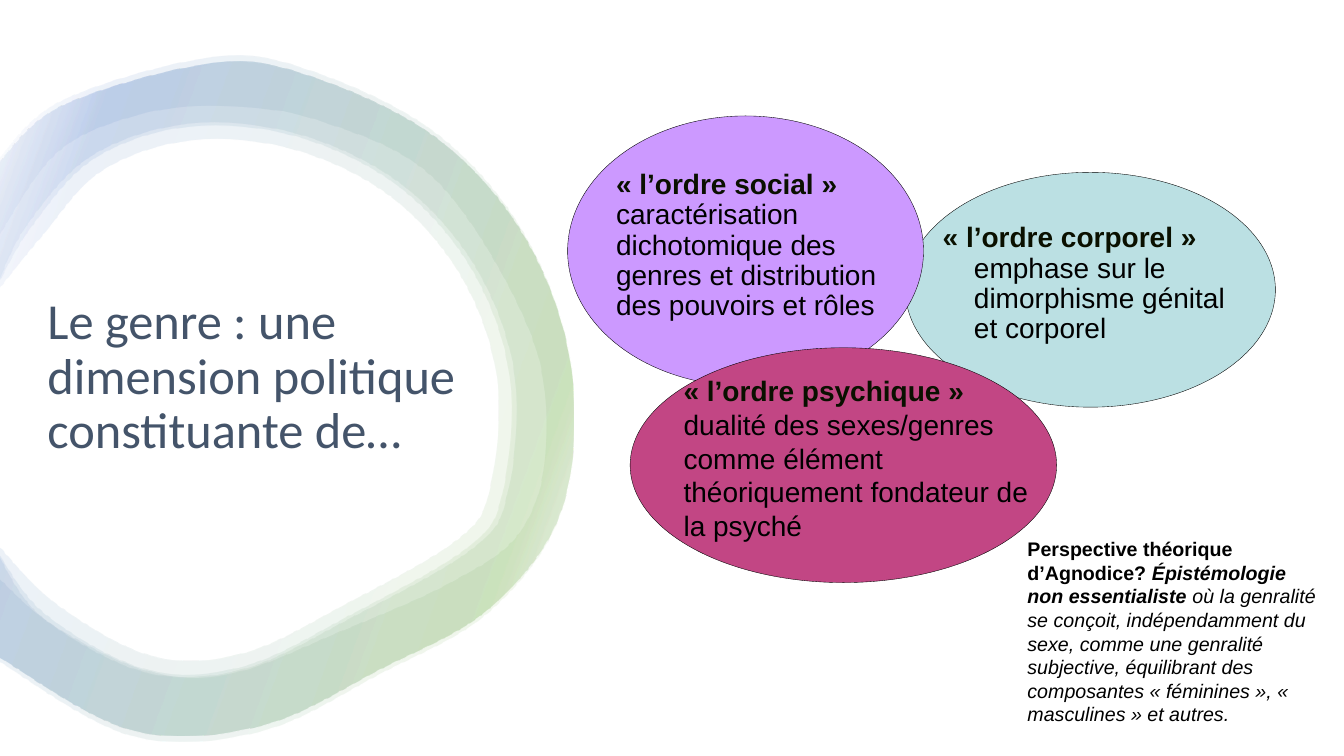
from lxml import etree
from pptx import Presentation
from pptx import util as u
from pptx.dml.color import RGBColor
from pptx.enum import shapes, text
from pptx.oxml import ns

PX = 9144
PAGE_SIZE = (1333, 750)
COLORS = {
    "white": "FFFFFF", "black": "000000", "title": "44546A", "heading": "0A1000",
    "corporel": "BBE0E3", "social": "CC99FF", "psychique": "C24684",
    "green": "70AD47", "blue": "4472C4",
}
RING_STOPS = [(2, "white"), (16, "green"), (85, "blue"), (100, "white")]
RING_ALPHA, RING_ANGLE = 10, 200
CURVE_STEPS = 8
RING_CENTER = (250, 395)

TITLE = ("Le genre : une dimension politique constituante de…", (42, 136, 422, 478))
ELLIPSES = {
    "corporel": (898, 171, 367, 233),
    "social": (563, 115, 353, 268),
    "psychique": (625, 345, 423, 233),
}
ORDERS = {
    "corporel": dict(
        box=(931, 218, 317, 128), heading="« l’ordre corporel » ",
        body="emphase sur le dimorphisme génital et corporel",
        leading=0.9, before=4, hanging=31),
    "social": dict(
        box=(607, 165, 310, 157), heading="« l’ordre social »",
        body=" caractérisation dichotomique des genres et distribution des pouvoirs et rôles",
        leading=0.9, before=4, hanging=0),
    "psychique": dict(
        box=(674, 367, 374, 170), heading="« l’ordre psychique »",
        body=" dualité des sexes/genres comme élément théoriquement fondateur de la psyché",
        leading=1.0, before=11, hanging=0),
}
PERSPECTIVE_BOX = (1015, 529, 299, 185)
PERSPECTIVE = [
    ("Perspective théorique d’Agnodice? ", True, False),
    ("Épistémologie non essentialiste", True, True),
    (" où la genralité se conçoit, indépendamment du sexe, comme une genralité subjective, "
     "équilibrant des composantes « féminines », « masculines » et autres.", False, True),
]

OUTSIDE = [
    (-2, 163), (62, 105), (211, 63), (310, 77), (433, 138), (520, 237), (565, 365),
    (556, 504), (485, 602), (376, 663), (258, 719), (129, 723), (-2, 650),
]
INSIDE = [
    (-2, 547), (46, 609), (145, 663), (241, 660), (345, 610), (463, 542), (497, 488),
    (504, 373), (467, 268), (394, 185), (294, 136), (187, 126), (93, 158), (31, 226),
    (-2, 283),
]
WIDE_INSIDE = [
    (-2, 572), (53, 620), (145, 665), (229, 668), (335, 627), (447, 577), (515, 527),
    (540, 444), (524, 328), (433, 180), (317, 120), (217, 105), (133, 115), (56, 152),
    (-2, 236),
]


def scaled(points, across, down):
    cx, cy = RING_CENTER
    return [(x if x < 0 else cx + (x - cx) * across, cy + (y - cy) * down) for x, y in points]


RINGS = [
    (scaled(OUTSIDE, 1, 1.02), WIDE_INSIDE),
    (OUTSIDE, scaled(INSIDE, 1.02, 1.01)),
    (OUTSIDE, scaled(INSIDE, 0.95, 0.95)),
    (OUTSIDE, INSIDE),
]


def emu(lengths):
    return [u.Emu(round(length * PX)) for length in lengths]


def color(name):
    return RGBColor.from_string(COLORS[name])


def smooth(knots):
    padded = [knots[0], *knots, knots[-1]]
    points = []
    for quad in zip(padded, padded[1:], padded[2:], padded[3:]):
        for i in range(CURVE_STEPS):
            t = i / CURVE_STEPS
            weights = (-t + 2 * t ** 2 - t ** 3, 2 - 5 * t ** 2 + 3 * t ** 3,
                       t + 4 * t ** 2 - 3 * t ** 3, t ** 3 - t ** 2)
            points.append([
                sum(w * knot[axis] for w, knot in zip(weights, quad)) / 2 for axis in (0, 1)])
    return points + [knots[-1]]


def add_ring(page, outside, inside):
    points = [emu(point) for point in smooth(outside) + smooth(inside)]
    builder = page.shapes.build_freeform(*points[0], scale=1.0)
    builder.add_line_segments(points[1:], close=True)
    ring = builder.convert_to_shape()
    ring.shadow.inherit = False
    ring.line.fill.background()
    ring.fill.gradient()
    gradient = ring.element.spPr.find(ns.qn("a:gradFill"))
    gradient.find(ns.qn("a:lin")).set("ang", str(RING_ANGLE * 60000))
    stops = gradient.find(ns.qn("a:gsLst"))
    for stop in list(stops):
        stops.remove(stop)
    for position, name in RING_STOPS:
        stop = etree.SubElement(stops, ns.qn("a:gs"), pos=str(position * 1000))
        tint = etree.SubElement(stop, ns.qn("a:srgbClr"), val=COLORS[name])
        etree.SubElement(tint, ns.qn("a:alpha"), val=str(RING_ALPHA * 1000))


def add_ellipse(page, name):
    ellipse = page.shapes.add_shape(shapes.MSO_SHAPE.OVAL, *emu(ELLIPSES[name]))
    ellipse.shadow.inherit = False
    ellipse.fill.solid()
    ellipse.fill.fore_color.rgb = color(name)
    ellipse.line.color.rgb = color("black")
    ellipse.line.width = u.Pt(0.25)


def add_span(para, words, size, tone="black", bold=False, italic=False, face="Arial"):
    span = para.add_run()
    span.text = words
    span.font.name, span.font.size = face, u.Pt(size)
    span.font.bold, span.font.italic = bold, italic
    span.font.color.rgb = color(tone)


def set_frame(frame, inset):
    frame.word_wrap = True
    frame.margin_left, frame.margin_top, frame.margin_right, frame.margin_bottom = emu([inset] * 4)


def add_box(page, place):
    box = page.shapes.add_textbox(*emu(place))
    set_frame(box.text_frame, 4)
    return box


def add_order(page, name):
    order = ORDERS[name]
    para = add_box(page, order["box"]).text_frame.paragraphs[0]
    para.line_spacing = order["leading"]
    para.space_before = u.Pt(order["before"])
    if order["hanging"]:
        indent = order["hanging"] * PX
        properties = para._p.get_or_add_pPr()
        properties.set("marL", str(indent))
        properties.set("indent", str(-indent))
    add_span(para, order["heading"], 20, "heading", bold=True)
    add_span(para, order["body"], 20)


def add_title(page):
    words, place = TITLE
    title = page.shapes.title
    title.element.getparent().append(title.element)
    title.left, title.top, title.width, title.height = emu(place)
    frame = title.text_frame
    set_frame(frame, 5)
    frame.auto_size = text.MSO_AUTO_SIZE.NONE
    frame.vertical_anchor = text.MSO_ANCHOR.MIDDLE
    para = frame.paragraphs[0]
    para.alignment = text.PP_ALIGN.LEFT
    para.line_spacing = 0.9
    add_span(para, words, 36, "title", face="Calibri")


def main():
    deck = Presentation()
    deck.slide_width, deck.slide_height = emu(PAGE_SIZE)
    page = deck.slides.add_slide(deck.slide_layouts[5])
    for outside, inside in RINGS:
        add_ring(page, outside, inside)
    add_title(page)
    for name in ("corporel", "social"):
        add_ellipse(page, name)
    for name in ("corporel", "social"):
        add_order(page, name)
    add_ellipse(page, "psychique")
    add_order(page, "psychique")
    box = add_box(page, PERSPECTIVE_BOX)
    box.fill.solid()
    box.fill.fore_color.rgb = color("white")
    para = box.text_frame.paragraphs[0]
    for words, bold, italic in PERSPECTIVE:
        add_span(para, words, 14, bold=bold, italic=italic)
    deck.save("out.pptx")


if __name__ == "__main__":
    main()
